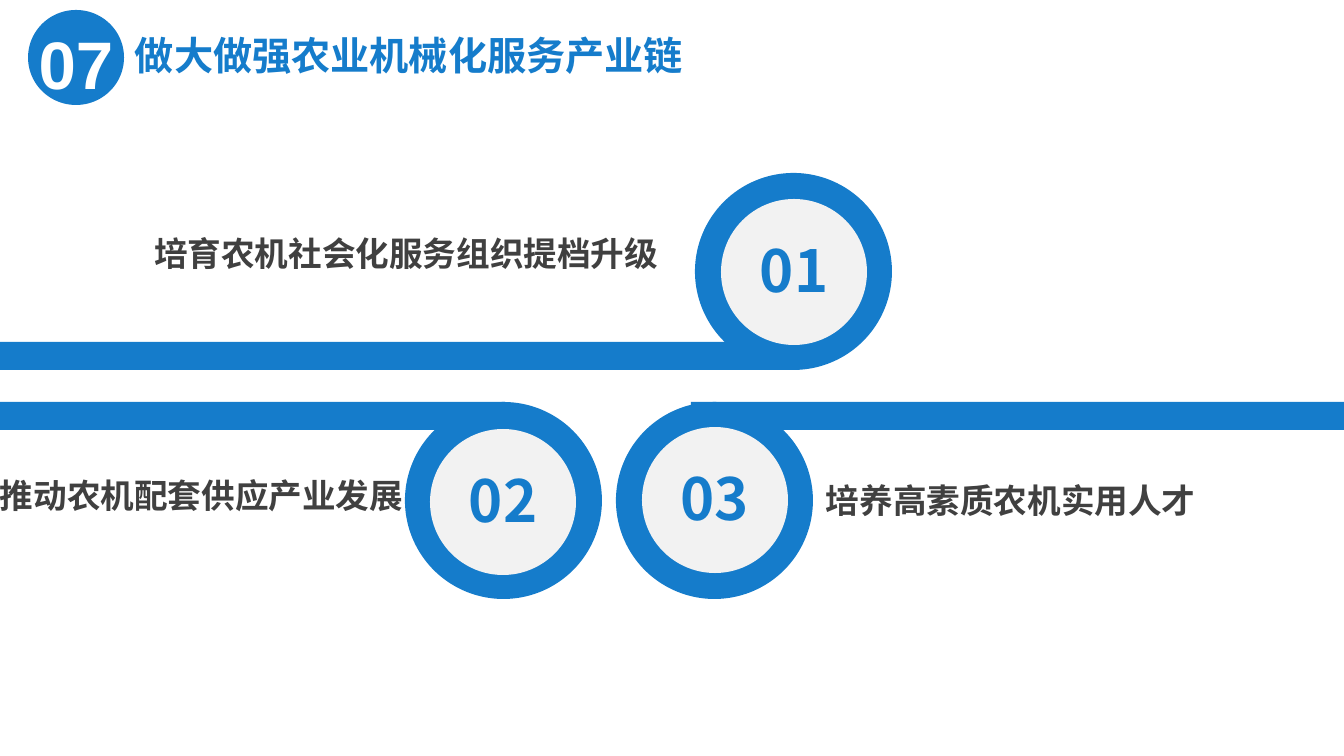
from lxml import etree
from pptx import Presentation
from pptx.dml.color import RGBColor
from pptx.enum.shapes import MSO_SHAPE as SHAPE
from pptx.enum.text import MSO_ANCHOR as ANCHOR, PP_ALIGN as ALIGN
from pptx.oxml.ns import qn
from pptx.util import Pt

PX = 914400 / 100.8
COLORS = {"blue": "157CCB", "disc": "F2F2F2", "text": "404040", "white": "FFFFFF"}
CJK = "Noto Sans CJK SC"
RING, DISC, BAR = 197, 146, 28


def add_filled(kind, box, color):
    shape = slide.shapes.add_shape(kind, *[round(v * PX) for v in box])
    shape.shadow.inherit = False
    shape.fill.solid()
    shape.fill.fore_color.rgb = RGBColor.from_string(COLORS[color])
    shape.line.fill.background()
    return shape


def write(shape, text, size, color, align, anchor, margins, face=CJK):
    """Put one bold line into a shape; margins are left, top, right, bottom in px."""
    frame = shape.text_frame
    frame.word_wrap = False
    frame.vertical_anchor = anchor
    (frame.margin_left, frame.margin_top,
     frame.margin_right, frame.margin_bottom) = [round(m * PX) for m in margins]
    paragraph = frame.paragraphs[0]
    paragraph.text = text
    paragraph.alignment = align
    font = paragraph.font
    font.size, font.bold, font.name = Pt(size), True, face
    font.color.rgb = RGBColor.from_string(COLORS[color])
    etree.SubElement(font._rPr, qn("a:ea")).set("typeface", face)


prs = Presentation()
prs.slide_width, prs.slide_height = round(1344 * PX), round(756 * PX)
slide = prs.slides.add_slide(prs.slide_layouts[6])

# number, bar (left, top, width), ring (left, top), disc (left, top)
branches = [
    ("02", (0, 402, 505), (405, 402), (430, 429)),
    ("01", (0, 342, 794), (695, 173), (721, 199)),
    ("03", (691, 402, 653), (616, 402), (642, 427)),
]
for number, bar, ring, disc_corner in branches:
    add_filled(SHAPE.RECTANGLE, (*bar, BAR), "blue")
    add_filled(SHAPE.OVAL, (*ring, RING, RING), "blue")
    disc = add_filled(SHAPE.OVAL, (*disc_corner, DISC, DISC), "disc")
    write(disc, number, 41.4, "blue", ALIGN.CENTER, ANCHOR.MIDDLE, (10, 5, 10, 11))

badge = add_filled(SHAPE.OVAL, (28, 10, 96, 95), "blue")
write(badge, "07", 48, "white", ALIGN.CENTER, ANCHOR.MIDDLE, (0, 10, 0, 0), "Arial")

headings = [
    ("做大做强农业机械化服务产业链", 28, "blue", (125, 31, 708, 57)),
    ("培育农机社会化服务组织提档升级", 24, "text", (144, 233, 525, 51)),
    ("推动农机配套供应产业发展", 24, "text", (-10, 475, 429, 56)),
    ("培养高素质农机实用人才", 24, "text", (816, 480, 390, 51)),
]
for text, size, color, box in headings:
    heading = slide.shapes.add_textbox(*[round(v * PX) for v in box])
    write(heading, text, size, color, ALIGN.LEFT, ANCHOR.TOP, (10, 0, 10, 0))

prs.save("out.pptx")
